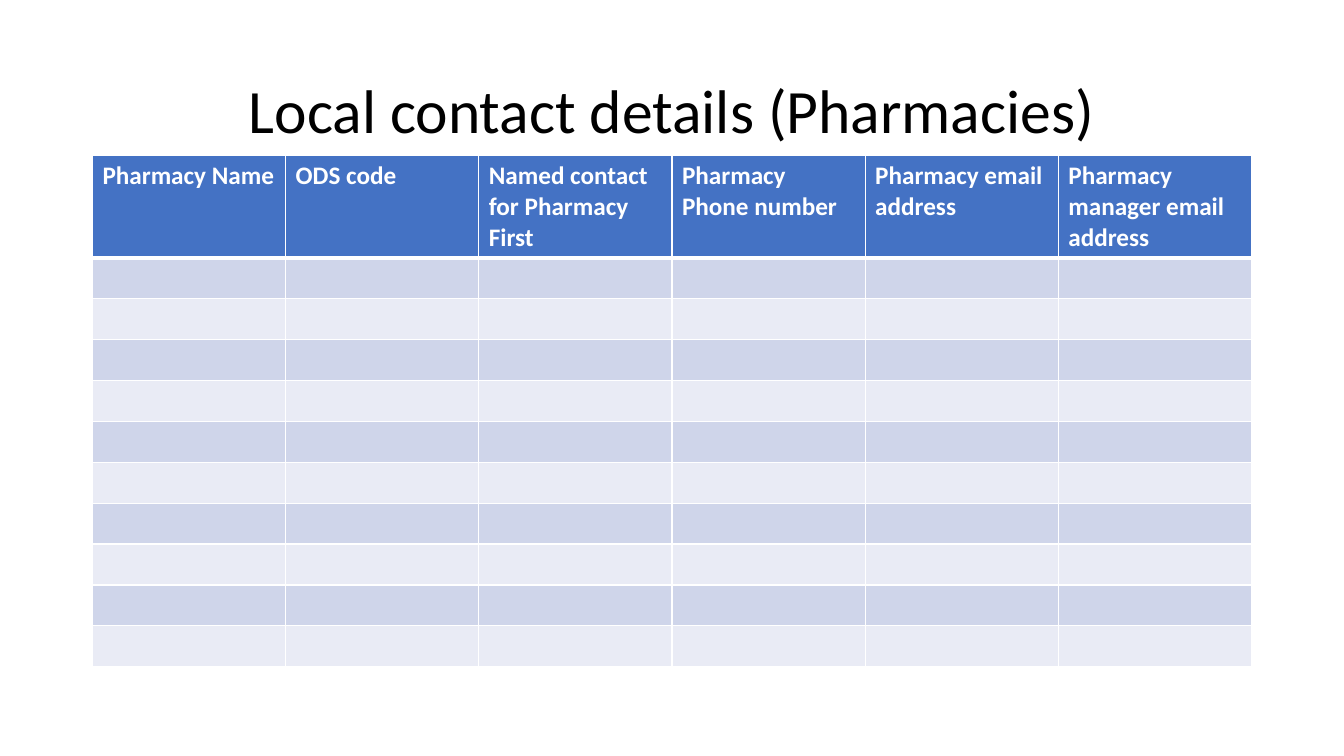
from lxml import etree
from pptx import Presentation
from pptx.dml.color import RGBColor
from pptx.enum.text import MSO_ANCHOR, PP_ALIGN
from pptx.oxml.ns import qn
from pptx.util import Cm, Pt

MIDDLE = MSO_ANCHOR.MIDDLE
CENTER = PP_ALIGN.CENTER

BLACK = RGBColor(0x00, 0x00, 0x00)
WHITE = RGBColor(0xFF, 0xFF, 0xFF)
HEADER_BLUE = RGBColor(0x44, 0x72, 0xC4)
BAND_DARK = RGBColor(0xCF, 0xD5, 0xEA)
BAND_LIGHT = RGBColor(0xE9, 0xEB, 0xF5)

LEFT, CONTENT_WIDTH = Cm(2.33), Cm(29.21)
HEADER_HEIGHT, ENTRY_HEIGHT = Cm(2.55), Cm(1.03)
ENTRY_ROWS = 10
THIN, THICK = Pt(1), Pt(3)

CONTACT_FIELDS = [
    "Pharmacy Name",
    "ODS code",
    "Named contact for Pharmacy First",
    "Pharmacy Phone number",
    "Pharmacy email address",
    "Pharmacy manager email address",
]


class ContactSlide:
    font_name = "Calibri"

    def __init__(self, presentation):
        self.slide = presentation.slides.add_slide(presentation.slide_layouts[5])

    def add_run(self, paragraph, text, size, color, bold=False):
        run = paragraph.add_run()
        run.text = text
        run.font.name = self.font_name
        run.font.size = Pt(size)
        run.font.bold = bold
        run.font.color.rgb = color

    def add_title(self, text):
        title = self.slide.shapes.title
        title.left, title.top = LEFT, Cm(1.01)
        title.width, title.height = CONTENT_WIDTH, Cm(3.68)
        title.text_frame.vertical_anchor = MIDDLE
        heading = title.text_frame.paragraphs[0]
        heading.alignment = CENTER
        heading.line_spacing = 0.9
        self.add_run(heading, text, 44, BLACK)

    def set_borders(self, cell, top, bottom):
        properties = cell._tc.get_or_add_tcPr()
        for side, width in (("L", THIN), ("R", THIN), ("T", top), ("B", bottom)):
            line = etree.SubElement(properties, qn(f"a:ln{side}"), w=str(width))
            fill = etree.SubElement(line, qn("a:solidFill"))
            etree.SubElement(fill, qn("a:srgbClr"), val=str(WHITE))

    def add_contact_table(self, fields, entry_rows):
        height = HEADER_HEIGHT + entry_rows * ENTRY_HEIGHT
        table = self.slide.shapes.add_table(
            entry_rows + 1, len(fields), LEFT, Cm(3.92), CONTENT_WIDTH, height
        ).table
        for row_number, row in enumerate(table.rows):
            is_header = row_number == 0
            row.height = HEADER_HEIGHT if is_header else ENTRY_HEIGHT
            band = BAND_DARK if row_number % 2 else BAND_LIGHT
            for cell, field in zip(row.cells, fields):
                self.set_borders(
                    cell,
                    top=THICK if row_number == 1 else THIN,
                    bottom=THICK if is_header else THIN,
                )
                cell.fill.solid()
                cell.fill.fore_color.rgb = HEADER_BLUE if is_header else band
                if is_header:
                    label = cell.text_frame.paragraphs[0]
                    self.add_run(label, field, 18, WHITE, bold=True)


def main():
    presentation = Presentation()
    presentation.slide_width = Cm(33.87)
    presentation.slide_height = Cm(19.05)
    contacts = ContactSlide(presentation)
    contacts.add_title("Local contact details (Pharmacies)")
    contacts.add_contact_table(CONTACT_FIELDS, ENTRY_ROWS)
    presentation.save("out.pptx")


if __name__ == "__main__":
    main()
